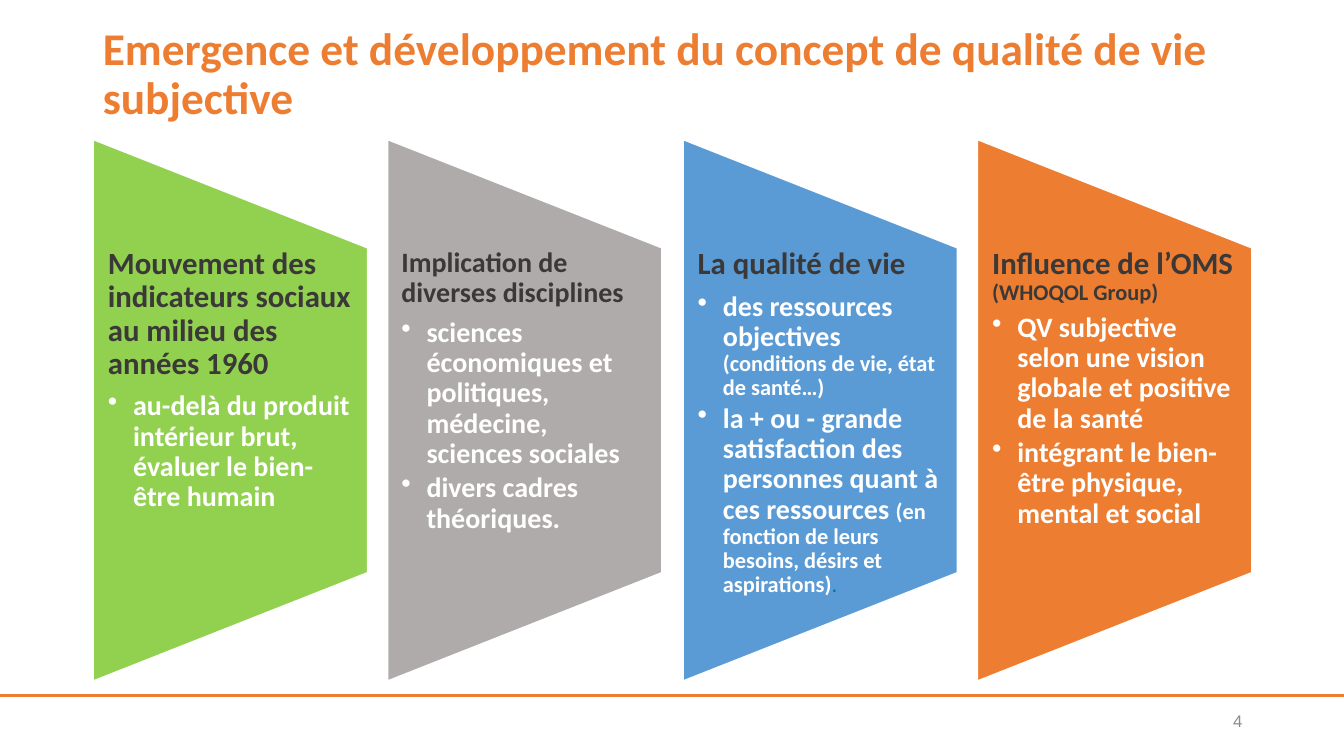
from lxml import etree
from pptx import Presentation
from pptx import util as u
from pptx.dml.color import RGBColor
from pptx.enum import shapes, text
from pptx.oxml import ns

PX = 9144  # 100 px to the inch
ORANGE, WHITE, DARK = "ED7D31", "FFFFFF", "3B3838"
COLUMN_TOP, COLUMN_WIDTH, COLUMN_HEIGHT = 139, 272, 537

# Each column: fill, side inset, heading runs, bullets as lists of runs.
# A run is (text, size) with an optional colour of its own.
COLUMNS = [
    ("92D050", 15,
     [("Mouvement des indicateurs sociaux au milieu des années 1960", 22)],
     [[("au-delà du produit intérieur brut, évaluer le bien-être humain", 20)]]),
    ("AFABAB", 14,
     [("Implication de diverses disciplines", 20)],
     [[("sciences économiques et politiques, médecine, sciences sociales", 20)],
      [("divers cadres théoriques.", 20)]]),
    ("5B9BD5", 15,
     [("La qualité de vie", 22)],
     [[("des ressources objectives ", 20),
       ("(conditions de vie, état de santé…)", 16)],
      [("la + ou - grande satisfaction des personnes quant à ces ressources ", 20),
       ("(en fonction de leurs besoins, désirs et aspirations)", 16),
       (".", 16, "0070C0")]]),
    (ORANGE, 15,
     [("Influence de l’OMS ", 22), ("(WHOQOL Group)", 16)],
     [[("QV subjective selon une vision globale et positive de la santé", 20)],
      [("intégrant le bien-être physique, mental et social", 20)]]),
]


def color(value):
    return RGBColor.from_string(value)


def add_run(paragraph, words, size, value, bold=True, font="Calibri"):
    run = paragraph.add_run()
    run.text = words
    run.font.name = font
    run.font.size = u.Pt(size)
    run.font.bold = bold
    run.font.color.rgb = color(value)


presentation = Presentation()
presentation.slide_width = 1333 * PX
presentation.slide_height = 750 * PX
slide = presentation.slides.add_slide(presentation.slide_layouts[5])

# Title
title = slide.shapes.title
title.left, title.top, title.width, title.height = 92 * PX, 45 * PX, 1150 * PX, 59 * PX
title.text_frame.word_wrap = True
title.text_frame.auto_size = text.MSO_AUTO_SIZE.NONE
title.text_frame.vertical_anchor = text.MSO_ANCHOR.MIDDLE
paragraph = title.text_frame.paragraphs[0]
paragraph.alignment = text.PP_ALIGN.LEFT
paragraph.line_spacing = 0.9
add_run(paragraph, "Emergence et développement du concept de qualité de vie subjective", 32.4, ORANGE)

# Footer rule
rule = slide.shapes.add_connector(shapes.MSO_CONNECTOR.STRAIGHT, 0, 690 * PX, 1333 * PX, 690 * PX)
rule.line.color.rgb = color(ORANGE)
rule.line.width = u.Pt(2.25)
etree.SubElement(rule._element.spPr, ns.qn("a:effectLst"))

# Columns
for index, (fill, inset, heading, bullets) in enumerate(COLUMNS):
    left = 92 + index * 585 // 2
    # The panel is turned a quarter, so its width and height trade places.
    shift = (COLUMN_HEIGHT - COLUMN_WIDTH) // 2
    panel = slide.shapes.add_shape(
        shapes.MSO_SHAPE.FLOWCHART_MANUAL_OPERATION,
        (left - shift) * PX, (COLUMN_TOP + shift) * PX, COLUMN_HEIGHT * PX, COLUMN_WIDTH * PX)
    panel.rotation = 270
    panel.shadow.inherit = False
    panel.fill.solid()
    panel.fill.fore_color.rgb = color(fill)
    panel.line.color.rgb = color(WHITE)
    panel.line.width = u.Pt(1)

    box = slide.shapes.add_textbox(left * PX, 246 * PX, COLUMN_WIDTH * PX, 322 * PX)
    frame = box.text_frame
    frame.word_wrap = True
    frame.margin_left = frame.margin_right = inset * PX
    frame.margin_top = frame.margin_bottom = 0
    for position, runs in enumerate([heading] + bullets):
        is_heading = position == 0
        paragraph = frame.paragraphs[0] if is_heading else frame.add_paragraph()
        if not is_heading:
            paragraph.level = 1
            properties = paragraph._p.get_or_add_pPr()
            properties.set("marL", str(25 * PX))
            properties.set("indent", str(-25 * PX))
            etree.SubElement(properties, ns.qn("a:buChar")).set("char", "•")
        paragraph.line_spacing = 0.9
        paragraph.space_after = u.Pt(runs[-1][1] * (0.35 if is_heading else 0.15))
        for words, size, *own in runs:
            value = own[0] if own else DARK if is_heading else WHITE
            add_run(paragraph, words, size, value, bold=not own)

# Page number
number = slide.shapes.add_textbox(942 * PX, 695 * PX, 300 * PX, 40 * PX)
number.text_frame.word_wrap = True
number.text_frame.vertical_anchor = text.MSO_ANCHOR.MIDDLE
paragraph = number.text_frame.paragraphs[0]
paragraph.alignment = text.PP_ALIGN.RIGHT
add_run(paragraph, "4", 12, "8C8C8C", bold=False, font="Arial")

presentation.save("out.pptx")
